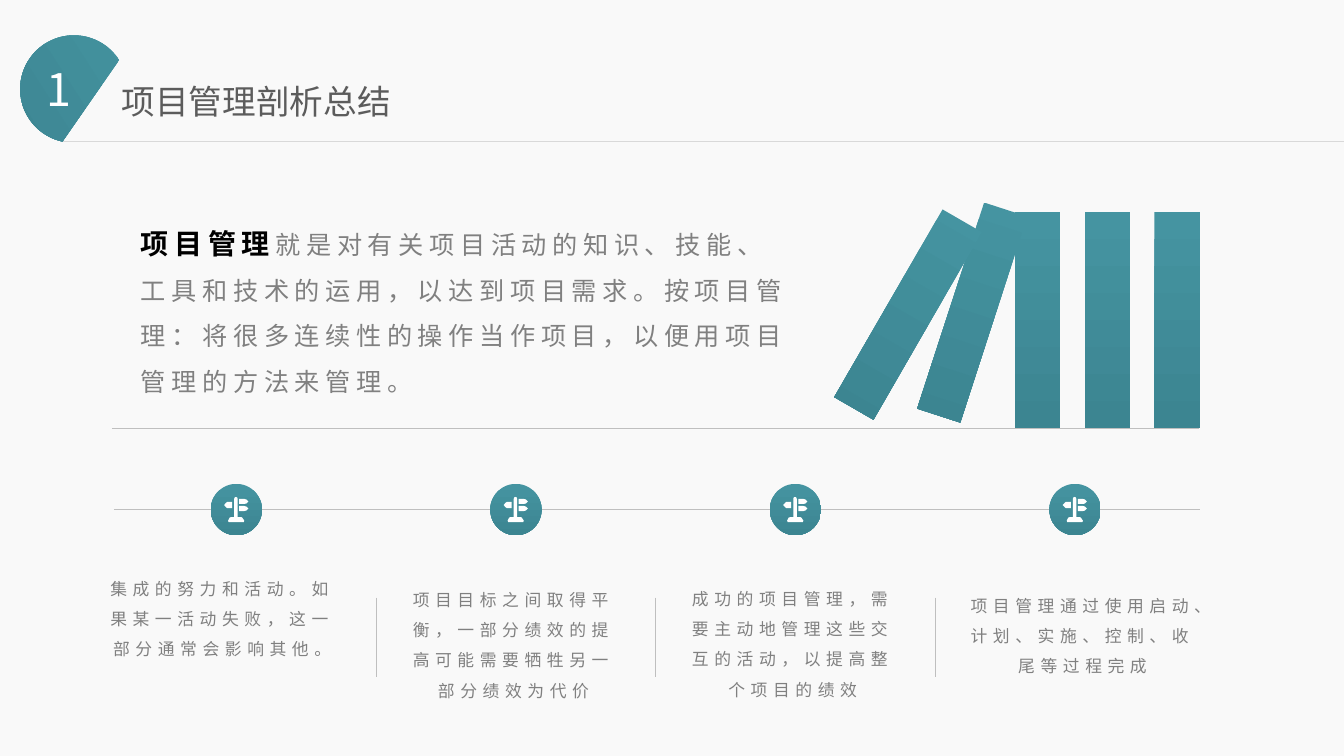
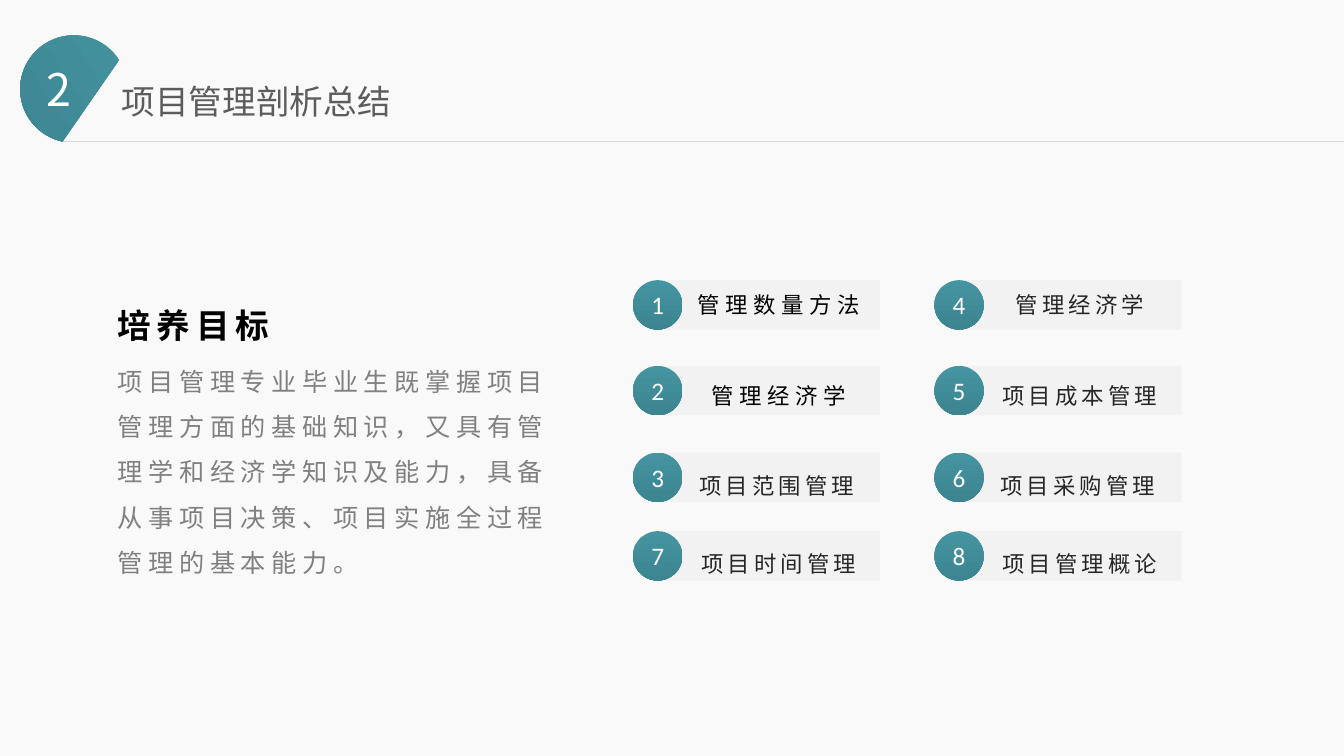
import pptx
import pptx.dml.color
import pptx.enum.shapes
import pptx.enum.text
import pptx.oxml
import pptx.oxml.ns
import pptx.util

# Grid: 40 columns by 22.5 rows of square cells
COLUMNS, ROWS = 40, 22.5
CELL = pptx.util.Inches(13.33) / COLUMNS

TEAL = ("4594A1", "3C8591")
PAPER, WHITE, BLACK = "F9F9F9", "FFFFFF", "000000"
GREY, INK, TITLE_GREY = "808080", "262626", "5C5C5C"
BAR, RULE, HEADER_RULE = "F2F2F2", "BFBFBF", "D9D9D9"
FONT, LABEL_FONT, DIGIT_FONT = "Noto Sans CJK JP", "Noto Sans CJK SC", "Calibri"
PRESET = pptx.enum.shapes.MSO_SHAPE
CENTER = pptx.enum.text.PP_ALIGN.CENTER

# Signpost contours, in thousandths of an inch
ARM = [(150, 20), (200, 20), (220, 25), (240, 45), (220, 65), (200, 70), (150, 70)]
SIGNPOST = [
    ARM,
    [(x, y + 70) for x, y in ARM],
    [(80, 50), (80, 110), (30, 110), (20, 102), (0, 80), (20, 58), (30, 50)],
    [(118, 0), (130, 5), (135, 20), (135, 200), (170, 200), (180, 205), (200, 235),
     (195, 250), (45, 250), (40, 235), (55, 205), (70, 200), (100, 200), (100, 20),
     (105, 5)],
]


def cells(*lengths):
    return [pptx.util.Emu(round(length * CELL)) for length in lengths]


def color(code):
    return pptx.dml.color.RGBColor.from_string(code)


def paint(shape, fill):
    """Fill with one colour, or with a pair as a top-to-bottom gradient."""
    shape.shadow.inherit = False
    shape.line.fill.background()
    if isinstance(fill, str):
        shape.fill.solid()
        shape.fill.fore_color.rgb = color(fill)
    else:
        shape.fill.gradient()
        shape.fill.gradient_angle = 270
        for stop, code in zip(shape.fill.gradient_stops, fill):
            stop.color.rgb = color(code)
    return shape


def add_block(slide, preset, box, fill, rotation=0):
    block = paint(slide.shapes.add_shape(preset, *cells(*box)), fill)
    block.rotation = rotation
    return block


def add_rule(slide, start, end, code=RULE, width=0.25):
    rule = slide.shapes.add_connector(
        pptx.enum.shapes.MSO_CONNECTOR.STRAIGHT, *cells(*start, *end))
    rule.line.color.rgb = color(code)
    rule.line.width = pptx.util.Pt(width)
    properties = rule._element.spPr
    properties.append(pptx.oxml.parse_xml(
        '<a:effectLst %s/>' % pptx.oxml.ns.nsdecls("a")))


def add_run(paragraph, text, size=18, code=GREY, font=FONT, bold=False, spacing=0):
    run = paragraph.add_run()
    run.text = text
    run.font.size = pptx.util.Pt(size)
    run.font.name = font
    run.font.bold = bold
    run.font.color.rgb = color(code)
    properties = run.font._element
    properties.set("lang", "zh-CN")
    properties.set("spc", str(spacing * 100))
    properties.find(pptx.oxml.ns.qn("a:latin")).addnext(pptx.oxml.parse_xml(
        '<a:ea %s typeface="%s"/>' % (pptx.oxml.ns.nsdecls("a"), font)))


def add_text(slide, box, text, align=None, leading=None, **style):
    frame = slide.shapes.add_textbox(*cells(*box)).text_frame
    frame.word_wrap = True
    frame.auto_size = pptx.enum.text.MSO_AUTO_SIZE.SHAPE_TO_FIT_TEXT
    paragraph = frame.paragraphs[0]
    paragraph.alignment = align
    paragraph.line_spacing = leading
    add_run(paragraph, text, **style)
    return paragraph


def add_header(slide, number):
    add_block(slide, PRESET.CHORD, (0.6, 1.05, 3.2, 3.2), TEAL, rotation=57.3)
    add_rule(slide, (1.87, 4.2), (COLUMNS, 4.2), HEADER_RULE, 0.5)
    add_text(slide, (3.33, 2.25, 12.57, 1.5), "项目管理剖析总结",
             size=24, code=TITLE_GREY)
    add_text(slide, (1.08, 1.68, 1.56, 1.92), number, size=32, code=WHITE)


def add_books(slide, left, top):
    width, height = 1.35, 6.45
    upright = [(3.85 + 2.08 * i, 0.22, 0) for i in range(3)]
    for x, y, tilt in upright + [(1.91, 0, 18), (0, 0.06, 30)]:
        add_block(slide, PRESET.RECTANGLE, (left + x, top + y, width, height),
                  TEAL, rotation=tilt)


def add_signpost(slide, left, top):
    builder = None
    for contour in SIGNPOST:
        if builder is None:
            builder = slide.shapes.build_freeform(*contour[0], scale=914.4)
        else:
            builder.move_to(*contour[0])
        builder.add_line_segments(contour[1:], close=True)
    paint(builder.convert_to_shape(*cells(left, top)), WHITE)


def add_timeline(slide, left, top, step, notes):
    """Each note is its text with its offset in the column, its top and width."""
    axis = top + 0.76
    add_rule(slide, (left + 0.52, axis), (left + 32.83, axis))
    for i, (text, shift, drop, width) in enumerate(notes):
        x = left + i * step
        if i:
            add_rule(slide, (x, top + 3.39), (x, top + 5.76))
        marker = add_block(slide, PRESET.ROUNDED_RECTANGLE,
                           (x + 3.4, top, 1.53, 1.53), TEAL)
        marker.adjustments[0] = 0.5
        add_signpost(slide, x + 3.8, top + 0.39)
        add_text(slide, (x + shift, top + drop, width, 3.84), text,
                 align=CENTER, leading=1.5, size=12, spacing=4)


def add_course(slide, left, top, number, name, nudge, **style):
    add_block(slide, PRESET.RECTANGLE, (left + 0.72, top, 6.63, 1.47), BAR)
    badge = add_block(slide, PRESET.OVAL, (left, top, 1.47, 1.47), TEAL)
    badge.text_frame.vertical_anchor = pptx.enum.text.MSO_ANCHOR.MIDDLE
    digit = badge.text_frame.paragraphs[0]
    digit.alignment = CENTER
    add_run(digit, number, code=WHITE, font=DIGIT_FONT)
    shift, drop = nudge
    add_text(slide, (left + 1.47 + shift, top + drop, 5.73, 1.38), name,
             align=CENTER, leading=1.5, size=16, **style)


def build_summary(slide):
    add_header(slide, "1")
    add_books(slide, 26.35, 6.08)
    add_rule(slide, (3.33, 12.73), (35.67, 12.73))
    definition = add_text(slide, (3.9, 6.09, 19.92, 5.76), "项目管理", leading=1.5,
                          size=20, code=BLACK, bold=True, spacing=4)
    add_run(definition, "就是对有关项目活动的知识、技能、工具和技术的运用，以达到项目需求。"
            "按项目管理：将很多连续性的操作当作项目，以便用项目管理的方法来管理。", spacing=4)
    add_timeline(slide, 2.87, 14.4, 8.32, [
        ("集成的努力和活动。如果某一活动失败，这一部分通常会影响其他。", -0.2, 2.37, 7.89),
        ("项目目标之间取得平衡，一部分绩效的提高可能需要牺牲另一部分绩效为代价",
         0.48, 2.7, 7.23),
        ("成功的项目管理，需要主动地管理这些交互的活动，以提高整个项目的绩效",
         0.47, 2.67, 7.23),
        ("项目管理通过使用启动、计划、实施、控制、收尾等过程完成", 0.73, 2.88, 7.32),
    ])


def build_goals(slide):
    add_header(slide, "2")
    add_text(slide, (3.21, 8.34, 8.01, 1.92), "培养目标", leading=1.5,
             size=24, code=BLACK, bold=True, spacing=4)
    add_text(slide, (3.21, 10.29, 14.04, 6.96),
             "项目管理专业毕业生既掌握项目管理方面的基础知识，又具有管理学和经济学知识及能力，"
             "具备从事项目决策、项目实施全过程管理的基本能力。", leading=1.5, spacing=4)
    # Course grid: two columns, four rows
    strong = dict(code=BLACK, spacing=4)
    plain = dict(code=INK, font=LABEL_FONT, spacing=3)
    rows = [
        (8.34, (0, -0.21), strong, ("1", "管理数量方法"), ("4", "管理经济学")),
        (10.89, (0, -0.06), strong, ("2", "管理经济学"), ("5", "项目成本管理")),
        (13.47, (-0.06, 0.03), plain, ("3", "项目范围管理"), ("6", "项目采购管理")),
        (15.81, (0, 0.03), plain, ("7", "项目时间管理"), ("8", "项目管理概论")),
    ]
    for top, nudge, first_style, first, second in rows:
        add_course(slide, 18.84, top, *first, nudge, **first_style)
        add_course(slide, 27.81, top, *second, nudge, **plain)


def main():
    deck = pptx.Presentation()
    deck.slide_width, deck.slide_height = cells(COLUMNS, ROWS)
    backdrop = deck.slide_master.background.fill
    backdrop.solid()
    backdrop.fore_color.rgb = color(PAPER)
    for build in (build_summary, build_goals):
        build(deck.slides.add_slide(deck.slide_layouts[6]))
    deck.save("out.pptx")


if __name__ == "__main__":
    main()
